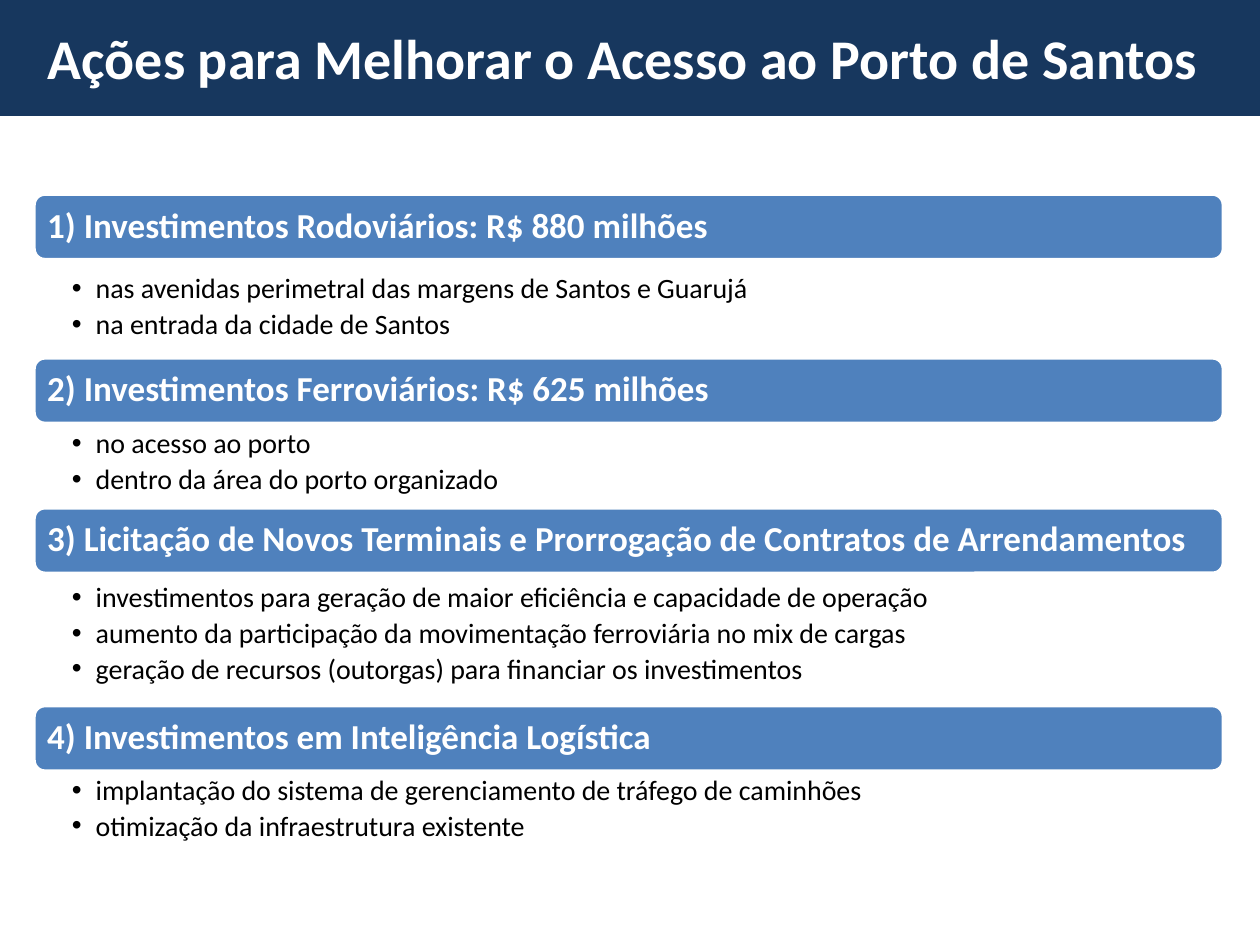
from lxml import etree
from pptx import Presentation
from pptx.dml.color import RGBColor
from pptx.enum.shapes import MSO_SHAPE
from pptx.enum.text import MSO_ANCHOR, PP_ALIGN
from pptx.oxml.ns import qn
from pptx.util import Inches, Pt

RECTANGLE = MSO_SHAPE.RECTANGLE
ROUNDED = MSO_SHAPE.ROUNDED_RECTANGLE
TOP, MIDDLE = MSO_ANCHOR.TOP, MSO_ANCHOR.MIDDLE
LEFT = PP_ALIGN.LEFT

NAVY = RGBColor(0x17, 0x37, 0x5E)
BLUE = RGBColor(0x4F, 0x81, 0xBD)
WHITE = RGBColor(0xFF, 0xFF, 0xFF)
BLACK = RGBColor(0x00, 0x00, 0x00)

MARGIN, CONTENT_WIDTH = 0.27, 9.44
HEADING_HEIGHT = 0.52
LINE_HEIGHT = 0.3

SECTIONS = [
    (1.54, 2.15, "1) Investimentos Rodoviários: R$ 880 milhões", [
        "nas avenidas perimetral das margens de Santos e Guarujá",
        "na entrada da cidade de Santos",
    ]),
    (2.84, 3.38, "2) Investimentos Ferroviários: R$ 625 milhões", [
        "no acesso ao porto",
        "dentro da área do porto organizado",
    ]),
    (4.03, 4.6, "3) Licitação de Novos Terminais e Prorrogação de Contratos de Arrendamentos", [
        "investimentos para geração de maior eficiência e capacidade de operação",
        "aumento da participação da movimentação ferroviária no mix de cargas",
        "geração de recursos (outorgas) para financiar os investimentos",
    ]),
    (5.6, 6.13, "4) Investimentos em Inteligência Logística", [
        "implantação do sistema de gerenciamento de tráfego de caminhões",
        "otimização da infraestrutura existente",
    ]),
]


class SlideBuilder:
    font_name = "Calibri"

    def __init__(self, slide):
        self.slide = slide

    def panel(self, preset, left, top, width, height, fill):
        panel = self.slide.shapes.add_shape(
            preset, Inches(left), Inches(top), Inches(width), Inches(height))
        panel.shadow.inherit = False
        panel.fill.solid()
        panel.fill.fore_color.rgb = fill
        panel.line.fill.background()
        return panel

    def frame(self, holder, insets, anchor=TOP):
        frame = holder.text_frame
        frame.word_wrap = True
        frame.vertical_anchor = anchor
        (frame.margin_left, frame.margin_top,
         frame.margin_right, frame.margin_bottom) = map(Inches, insets)
        return frame

    def text_box(self, left, top, width, height, insets):
        box = self.slide.shapes.add_textbox(
            Inches(left), Inches(top), Inches(width), Inches(height))
        return self.frame(box, insets)

    def run(self, paragraph, text, size, color, bold=False):
        paragraph.alignment = LEFT
        run = paragraph.add_run()
        run.text = text
        run.font.name = self.font_name
        run.font.size = Pt(size)
        run.font.bold = bold
        run.font.color.rgb = color

    def title(self, text):
        self.panel(RECTANGLE, 0, 0, 10, 0.92, NAVY)
        frame = self.text_box(0.28, 0.14, 9.44, 0.64, (0.1, 0.05, 0.1, 0.05))
        self.run(frame.paragraphs[0], text, 32, WHITE, True)

    def heading(self, top, text):
        bar = self.panel(ROUNDED, MARGIN, top, CONTENT_WIDTH, HEADING_HEIGHT, BLUE)
        bar.line.color.rgb = WHITE
        bar.line.width = Pt(2)
        paragraph = self.frame(bar, (0.08,) * 4, MIDDLE).paragraphs[0]
        paragraph.line_spacing = 0.9
        self.run(paragraph, text, 20, WHITE, True)

    def bullets(self, top, items):
        frame = self.text_box(MARGIN, top, CONTENT_WIDTH, LINE_HEIGHT * len(items),
                              (0.3, 0.03, 0.16, 0.03))
        for index, item in enumerate(items):
            paragraph = frame.add_paragraph() if index else frame.paragraphs[0]
            properties = paragraph._p.get_or_add_pPr()
            properties.set("marL", str(Inches(0.19)))
            properties.set("indent", str(-Inches(0.19)))
            etree.SubElement(properties, qn("a:buFont")).set("typeface", "Arial")
            etree.SubElement(properties, qn("a:buChar")).set("char", "•")
            paragraph.level = 1
            paragraph.line_spacing = 0.9
            paragraph.space_after = Pt(3.2)
            self.run(paragraph, item, 16, BLACK)


def main():
    presentation = Presentation()
    presentation.slide_width = Inches(10)
    presentation.slide_height = Inches(7.5)
    builder = SlideBuilder(presentation.slides.add_slide(presentation.slide_layouts[6]))
    builder.title("Ações para Melhorar o Acesso ao Porto de Santos")
    for heading_top, bullets_top, heading, items in SECTIONS:
        builder.heading(heading_top, heading)
        builder.bullets(bullets_top, items)
    presentation.save("out.pptx")


if __name__ == "__main__":
    main()
